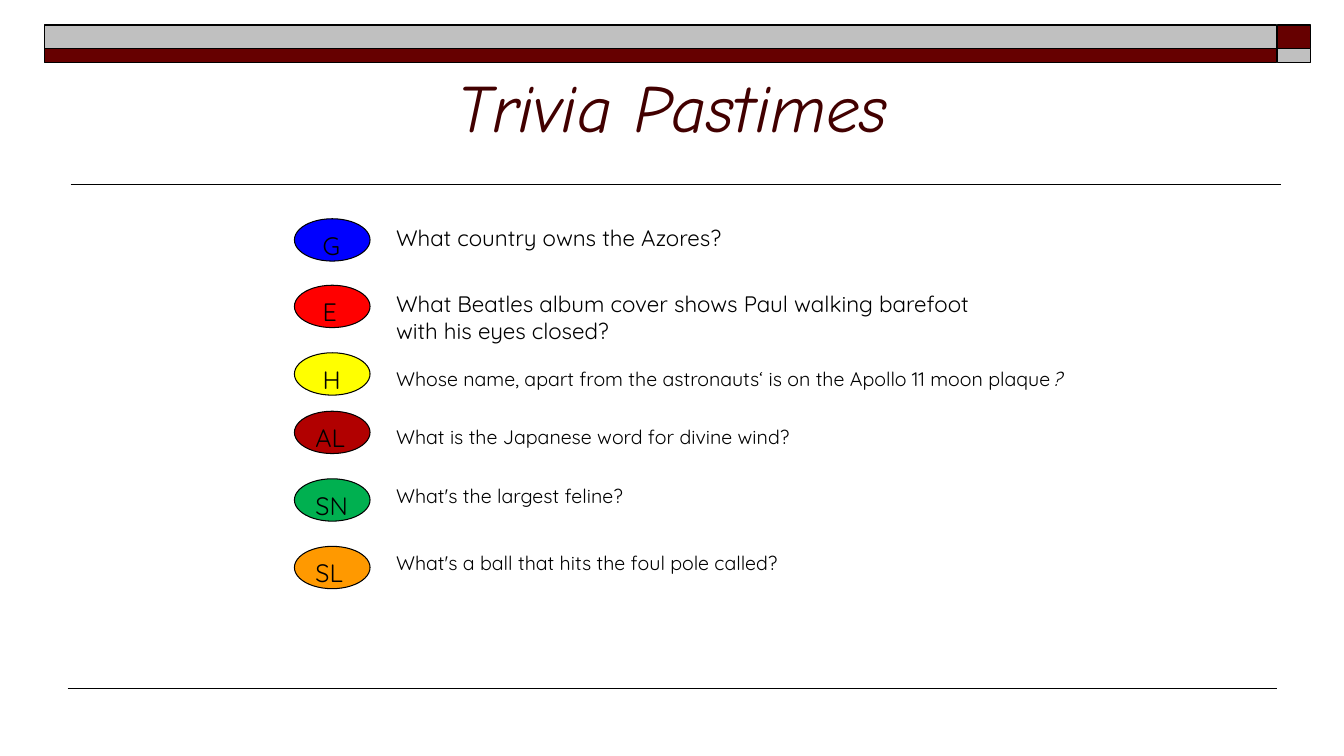
import pptx
import pptx.util
import pptx.dml.color
import pptx.enum.shapes
import pptx.enum.text
import pptx.oxml.ns
import lxml.etree

Inches = pptx.util.Inches
Pt = pptx.util.Pt
RGBColor = pptx.dml.color.RGBColor
Shape = pptx.enum.shapes.MSO_SHAPE
Anchor = pptx.enum.text.MSO_ANCHOR
Align = pptx.enum.text.PP_ALIGN

BLACK = RGBColor(0x00, 0x00, 0x00)
MAROON = RGBColor(0x66, 0x00, 0x00)
SILVER = RGBColor(0xC0, 0xC0, 0xC0)
WINE = RGBColor(0x42, 0x00, 0x00)
BLUE = RGBColor(0x00, 0x00, 0xFF)
RED = RGBColor(0xFF, 0x00, 0x00)
YELLOW = RGBColor(0xFF, 0xFF, 0x00)
BRICK = RGBColor(0xB1, 0x00, 0x00)
GREEN = RGBColor(0x00, 0xB0, 0x50)
ORANGE = RGBColor(0xFF, 0x99, 0x00)


def add_block(kind, left, top, width, height, fill, weight):
    block = slide.shapes.add_shape(
        kind, Inches(left), Inches(top), Inches(width), Inches(height))
    block.shadow.inherit = False
    block.fill.solid()
    block.fill.fore_color.rgb = fill
    block.line.color.rgb = BLACK
    block.line.width = Pt(weight)
    return block


def set_text(frame, text, size):
    frame.word_wrap = True
    frame.vertical_anchor = Anchor.TOP
    para = frame.paragraphs[0]
    para.text = text
    para.alignment = Align.LEFT
    para.font.name = "Quicksand"
    para.font.size = Pt(size)
    para.font.color.rgb = BLACK
    return para


deck = pptx.Presentation()
deck.slide_width = Inches(13.33)
deck.slide_height = Inches(7.5)
slide = deck.slides.add_slide(deck.slide_layouts[5])

# Header band and rules
for left, top, width, height, fill in [
    (12.67, 0.25, 0.33, 0.23, MAROON),
    (0.44, 0.25, 12.22, 0.23, SILVER),
    (0.44, 0.48, 12.22, 0.14, MAROON),
    (12.67, 0.48, 0.33, 0.14, SILVER),
]:
    add_block(Shape.RECTANGLE, left, top, width, height, fill, 1)

for start, end, level, weight in [(0.7, 12.71, 1.83, 1), (0.67, 12.67, 6.83, 0.75)]:
    rule = slide.shapes.add_connector(
        pptx.enum.shapes.MSO_CONNECTOR.STRAIGHT,
        Inches(start), Inches(level), Inches(end), Inches(level))
    rule.line.color.rgb = BLACK
    rule.line.width = Pt(weight)
    lxml.etree.SubElement(
        rule.element.spPr, pptx.oxml.ns.qn("a:effectLst"))

# Title
title = slide.shapes.title
title.left, title.top = Inches(2.17), Inches(0.25)
title.width, title.height = Inches(9), Inches(1.25)
title.text_frame.vertical_anchor = Anchor.BOTTOM
head = title.text_frame.paragraphs[0]
head.text = "Trivia Pastimes"
head.alignment = Align.CENTER
head.font.name = "Comic Neue"
head.font.size = Pt(48)
head.font.italic = True
head.font.color.rgb = WINE

# Questions: letter, colour, badge top, text top, width, height, size, wording
for letter, fill, top, text_top, width, height, size, question in [
    ("G", BLUE, 2.17, 2.17, 6.17, 0.37, 16, "What country owns the Azores?"),
    ("E", RED, 2.83, 2.83, 6.25, 0.64, 16,
     "What Beatles album cover shows Paul walking barefoot with his eyes closed?"),
    ("H", YELLOW, 3.5, 3.59, 7.42, 0.34, 14,
     "Whose name, apart from the astronauts‘ is on the Apollo 11 moon plaque"),
    ("AL", BRICK, 4.08, 4.17, 7.08, 0.34, 14,
     "What is the Japanese word for divine wind?"),
    ("SN", GREEN, 4.75, 4.75, 6.5, 0.34, 14, "What's the largest feline?"),
    ("SL", ORANGE, 5.42, 5.42, 7.17, 0.34, 14,
     "What's a ball that hits the foul pole called?"),
]:
    badge = add_block(Shape.OVAL, 2.92, top, 0.75, 0.42, fill, 0.75)
    set_text(badge.text_frame, letter, 18)
    if len(letter) == 1:
        badge.text_frame.margin_left = Inches(0.17)
    box = slide.shapes.add_textbox(
        Inches(3.83), Inches(text_top), Inches(width), Inches(height))
    para = set_text(box.text_frame, question, size)
    if not question.endswith("?"):
        mark = para.add_run()
        mark.text = "?"
        mark.font.italic = True

deck.save("out.pptx")
